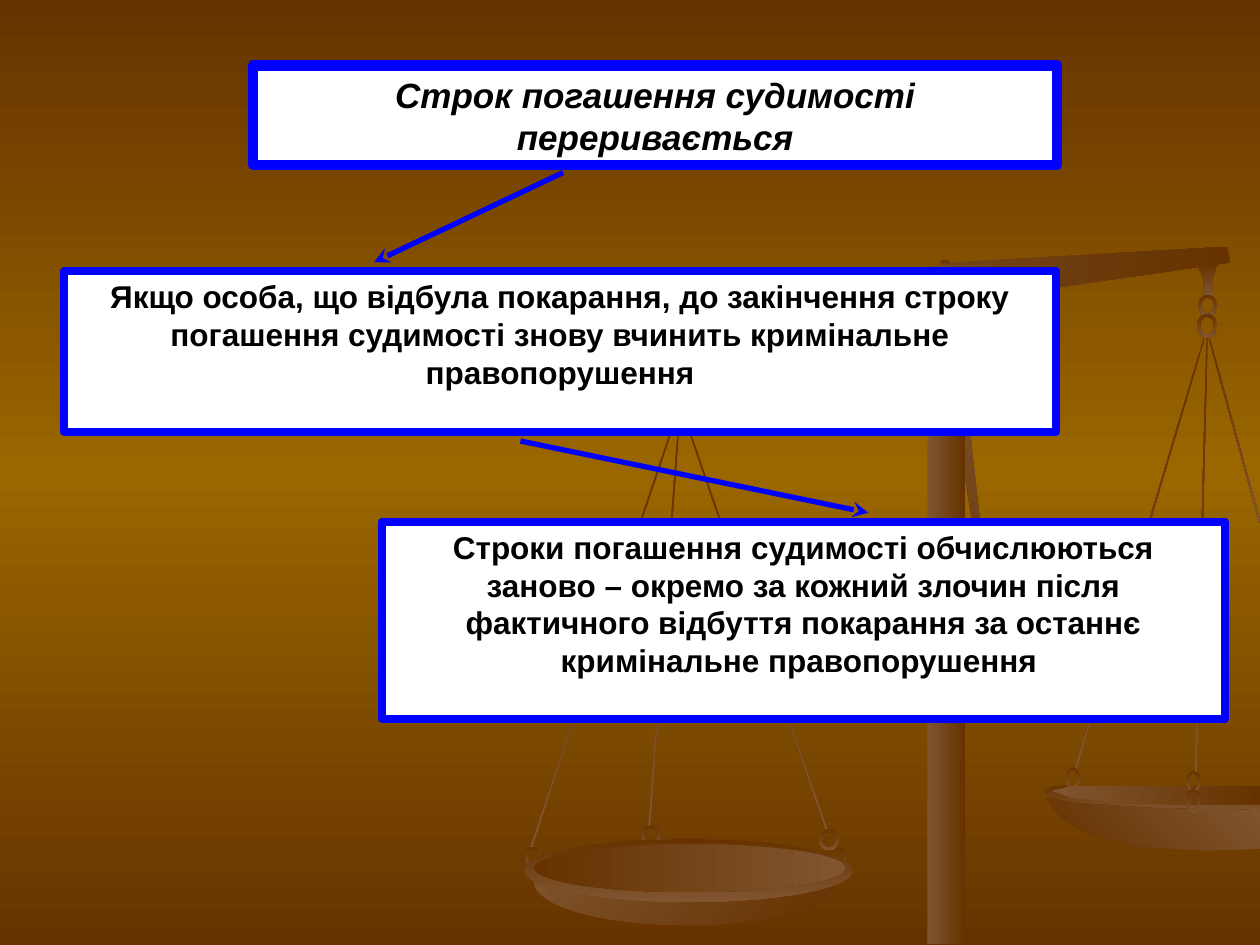
from copy import deepcopy

from lxml.etree import SubElement
from pptx import Presentation
from pptx.dml.color import RGBColor
from pptx.enum.shapes import MSO_CONNECTOR, MSO_SHAPE
from pptx.enum.text import MSO_ANCHOR, PP_ALIGN
from pptx.oxml.ns import qn
from pptx.util import Pt

COLORS = {
    "brown": "663300", "gold": "996600", "tan": "805530",
    "blue": "0000FF", "white": "FFFFFF", "black": "000000",
}
RGB = {name: RGBColor.from_string(code) for name, code in COLORS.items()}


def shade(fill, first, last, angle):
    """Apply a two-stop gradient; angle runs clockwise."""
    fill.gradient()
    fill.gradient_angle = (360 - angle) % 360
    for stop, name, place in zip(fill.gradient_stops, (first, last), (0, 1)):
        stop.color.rgb = RGB[name]
        stop.position = place


def cast(shape, first, angle):
    """Finish one part of the scales."""
    last = "tan" if first == "brown" else "brown"
    shade(shape.fill, first, last, angle)
    shape.line.fill.background()
    shape.shadow.inherit = False


deck = Presentation()
deck.slide_width, deck.slide_height = Pt(720), Pt(540)
slide = deck.slides.add_slide(deck.slide_layouts[6])
shapes = slide.shapes

# Background: brown at both ends, gold in the middle
back = slide.background.fill
shade(back, "brown", "brown", 90)
stops = slide._element.find(".//" + qn("a:gsLst"))
stops.insert(1, deepcopy(stops[0]))
mid = back.gradient_stops[1]
mid.position = 0.5
mid.color.rgb = RGB["gold"]

# Ropes: left, top, length, rotation
ropes = [
    (650.9, 187.2, 259.2, 16.6), (686.2, 191.5, 249.8, 1.5),
    (704.9, 190.1, 110.2, 344.6), (430.6, 226.8, 254.2, 341),
    (344.9, 227.5, 265, 18.6), (379.4, 234, 238.3, 4.2),
]
for left, top, size, turn in ropes:
    rope = shapes.add_shape(MSO_SHAPE.RECTANGLE, Pt(left), Pt(top), Pt(0.8), Pt(size))
    rope.rotation = turn
    cast(rope, "brown", 90)

# Right pan, hanger, beam and strut: first colour, angle, outline
forms = [
    ("brown", 90, [(720, 449), (655, 449), (602, 449), (596, 452), (600, 455),
                   (613, 459), (643, 462), (690, 464), (720, 464)]),
    ("brown", 315, [(598, 456), (606, 467), (623, 477), (650, 484), (689, 486),
                    (720, 485), (720, 463), (661, 462), (617, 459)]),
    ("tan", 0, [(720, 449), (645, 449), (613, 449), (601, 452), (613, 456),
                (643, 459), (688, 460), (720, 460)]),
    ("brown", 90, [(696, 150), (684, 151), (688, 160), (688, 170), (693, 170),
                   (693, 159)]),
    ("tan", 0, [(701, 141), (703, 150), (378, 197), (377, 190), (531, 153),
                (546, 150)]),
    ("tan", 45, [(570, 388), (540, 202), (539, 193), (547, 191), (549, 199)]),
]
for first, angle, points in forms:
    form = shapes.build_freeform(*points[0], scale=Pt(1))
    form.add_line_segments(points[1:], close=True)
    cast(form.convert_to_shape(), first, angle)

# Rings: left, top, width, height
rings = [
    (609.1, 438.5, 7.9, 12.2), (684.7, 168.5, 10.8, 12.2), (684, 179.3, 11.5, 13.7),
    (678.2, 440.6, 7.9, 12.2), (677.5, 450.7, 8.6, 13.7), (366.5, 471.6, 10.8, 11.5),
    (472.3, 483.8, 11.5, 13.7), (300.2, 483.8, 8.6, 11.5), (468, 473.8, 11.5, 12.2),
]
for box in rings:
    ring = shapes.add_shape(MSO_SHAPE.DONUT, *map(Pt, box))
    ring.adjustments[0] = 0.15
    cast(ring, "brown", 90)

# Pivot, left pan and pillar
solids = [
    (MSO_SHAPE.OVAL, (537.1, 148.3, 5.8, 5.8), "brown", 90),
    (MSO_SHAPE.OVAL, (305.3, 479.5, 172.8, 49), "tan", 45),
    (MSO_SHAPE.OVAL, (299.5, 479.5, 187.9, 36), "brown", 90),
    (MSO_SHAPE.OVAL, (305.3, 482.4, 177.8, 27.4), "brown", 0),
    (MSO_SHAPE.RECTANGLE, (529.9, 221.8, 21.6, 317.5), "tan", 0),
]
for kind, box, first, angle in solids:
    cast(shapes.add_shape(kind, *map(Pt, box)), first, angle)

# Text boxes: place, border, font size, italic, anchor, words
cards = [
    ((144.7, 37.4, 459.4, 56.9), 6, 20, True, MSO_ANCHOR.MIDDLE,
     "Строк погашення судимості переривається"),
    ((36.7, 154.8, 566.6, 92.2), 4.5, 18, False, MSO_ANCHOR.TOP,
     "Якщо особа, що відбула покарання, до закінчення строку погашення "
     "судимості знову вчинить кримінальне правопорушення"),
    ((218.2, 298.1, 481.7, 113), 4.5, 18, False, MSO_ANCHOR.TOP,
     "Строки погашення судимості обчислюються заново – окремо за кожний злочин "
     "після фактичного відбуття покарання за останнє кримінальне правопорушення "),
]
for box, edge, size, slant, anchor, words in cards:
    card = shapes.add_shape(MSO_SHAPE.RECTANGLE, *map(Pt, box))
    card.shadow.inherit = False
    card.fill.solid()
    card.fill.fore_color.rgb = RGB["white"]
    card.line.color.rgb = RGB["blue"]
    card.line.width = Pt(edge)
    frame = card.text_frame
    frame.word_wrap = True
    frame.vertical_anchor = anchor
    para = frame.paragraphs[0]
    para.text = words
    para.alignment = PP_ALIGN.CENTER
    font = para.font
    font.name, font.size = "Arial", Pt(size)
    font.bold, font.italic = True, slant
    font.color.rgb = RGB["black"]

# Arrows from each box to the next
for ends in [(321.8, 98.6, 213.8, 149.8), (297.4, 252, 496.1, 293)]:
    arrow = shapes.add_connector(MSO_CONNECTOR.STRAIGHT, *map(Pt, ends))
    arrow.line.color.rgb = RGB["blue"]
    arrow.line.width = Pt(3)
    SubElement(arrow.line._get_or_add_ln(), qn("a:tailEnd"), type="stealth")
    SubElement(arrow._element.spPr, qn("a:effectLst"))

deck.save("out.pptx")
